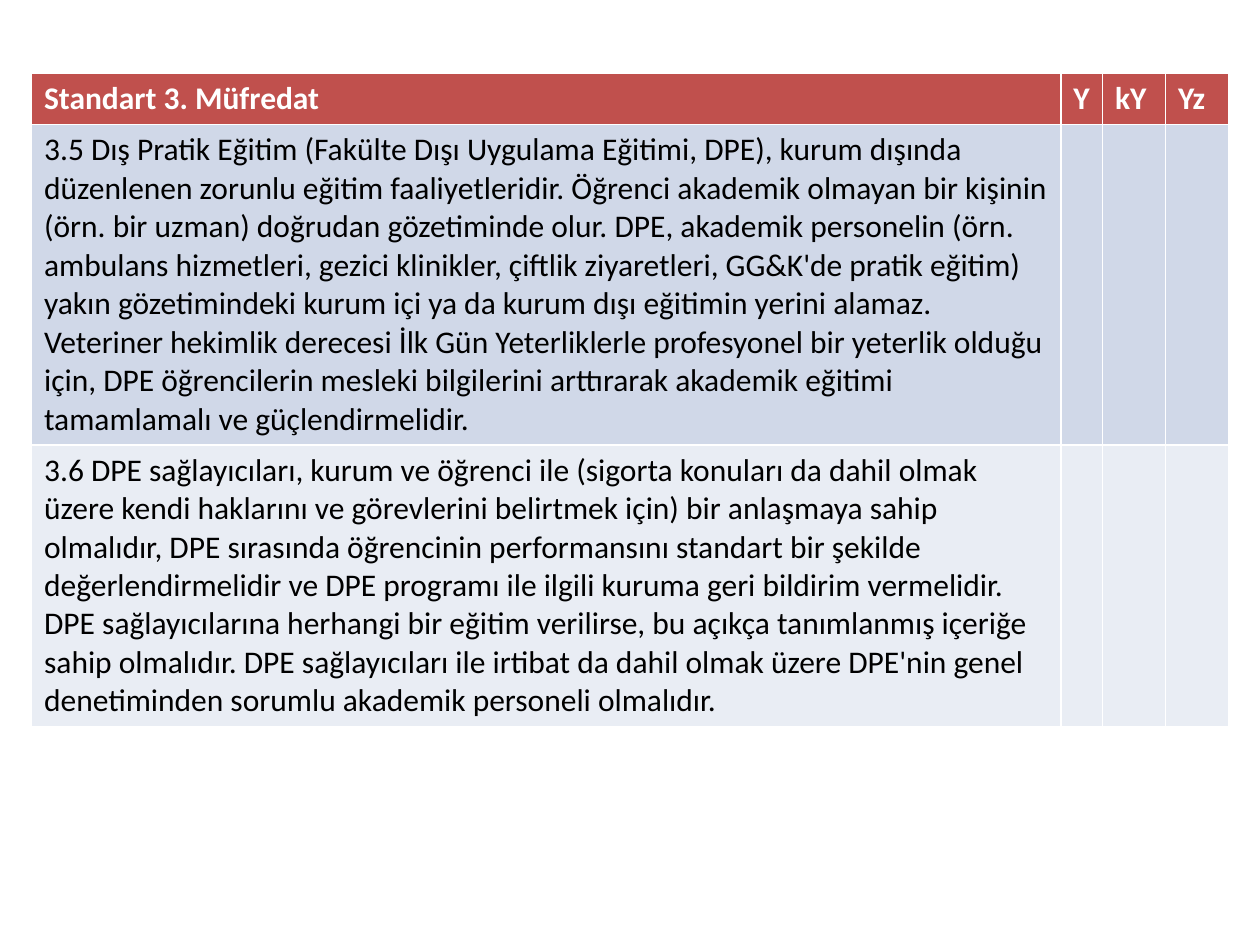
from dataclasses import dataclass

from pptx import Presentation
from pptx.dml.color import RGBColor
from pptx.util import Pt


@dataclass(frozen=True)
class Theme:
    font: str = "Calibri"
    text_size: float = 18
    header_fill: str = "C0504D"
    header_text: str = "FFFFFF"
    body_fills: tuple = ("D0D8E8", "E9EDF4")
    body_text: str = "000000"


THEME = Theme()

HEADINGS = ["Standart 3. Müfredat", "Y", "kY", "Yz"]
CRITERIA = [
    "3.5 Dış Pratik Eğitim (Fakülte Dışı Uygulama Eğitimi, DPE), kurum dışında "
    "düzenlenen zorunlu eğitim faaliyetleridir. Öğrenci akademik olmayan bir kişinin "
    "(örn. bir uzman) doğrudan gözetiminde olur. DPE, akademik personelin (örn. "
    "ambulans hizmetleri, gezici klinikler, çiftlik ziyaretleri, GG&K'de pratik eğitim) "
    "yakın gözetimindeki kurum içi ya da kurum dışı eğitimin yerini alamaz. "
    "Veteriner hekimlik derecesi İlk Gün Yeterliklerle profesyonel bir yeterlik olduğu "
    "için, DPE öğrencilerin mesleki bilgilerini arttırarak akademik eğitimi "
    "tamamlamalı ve güçlendirmelidir.",
    "3.6 DPE sağlayıcıları, kurum ve öğrenci ile (sigorta konuları da dahil olmak "
    "üzere kendi haklarını ve görevlerini belirtmek için) bir anlaşmaya sahip "
    "olmalıdır, DPE sırasında öğrencinin performansını standart bir şekilde "
    "değerlendirmelidir ve DPE programı ile ilgili kuruma geri bildirim vermelidir. "
    "DPE sağlayıcılarına herhangi bir eğitim verilirse, bu açıkça tanımlanmış içeriğe "
    "sahip olmalıdır. DPE sağlayıcıları ile irtibat da dahil olmak üzere DPE'nin genel "
    "denetiminden sorumlu akademik personeli olmalıdır.",
]
RATING_WIDTHS = [23.8, 36, 36]
ROW_HEIGHT = 29.2  # minimum; rows grow with their text


def fill_cell(cell, text, fill, color, bold):
    cell.fill.solid()
    cell.fill.fore_color.rgb = RGBColor.from_string(fill)
    if not text:
        return
    run = cell.text_frame.paragraphs[0].add_run()
    run.text = text
    run.font.name = THEME.font
    run.font.size = Pt(THEME.text_size)
    run.font.bold = bold
    run.font.color.rgb = RGBColor.from_string(color)


def add_criteria_table(slide, left, top, width, height):
    rows = [HEADINGS] + [[text] + [""] * len(RATING_WIDTHS) for text in CRITERIA]
    frame = slide.shapes.add_table(
        len(rows), len(HEADINGS), Pt(left), Pt(top), Pt(width), Pt(height))
    table = frame.table

    column_widths = [width - sum(RATING_WIDTHS)] + RATING_WIDTHS
    for column, column_width in zip(table.columns, column_widths):
        column.width = Pt(column_width)

    for row_index, (row, texts) in enumerate(zip(table.rows, rows)):
        row.height = Pt(ROW_HEIGHT)
        is_header = row_index == 0
        if is_header:
            fill, color = THEME.header_fill, THEME.header_text
        else:
            fill = THEME.body_fills[(row_index - 1) % len(THEME.body_fills)]
            color = THEME.body_text
        for cell, text in zip(row.cells, texts):
            fill_cell(cell, text, fill, color, is_header)

    # Setting row heights shrinks the frame to their sum
    frame.height = Pt(height)


def main():
    presentation = Presentation()
    presentation.slide_width, presentation.slide_height = Pt(720), Pt(540)
    blank_layout = presentation.slide_layouts[6]
    slide = presentation.slides.add_slide(blank_layout)
    add_criteria_table(slide, left=18, top=42, width=684, height=368)
    presentation.save("out.pptx")


if __name__ == "__main__":
    main()
